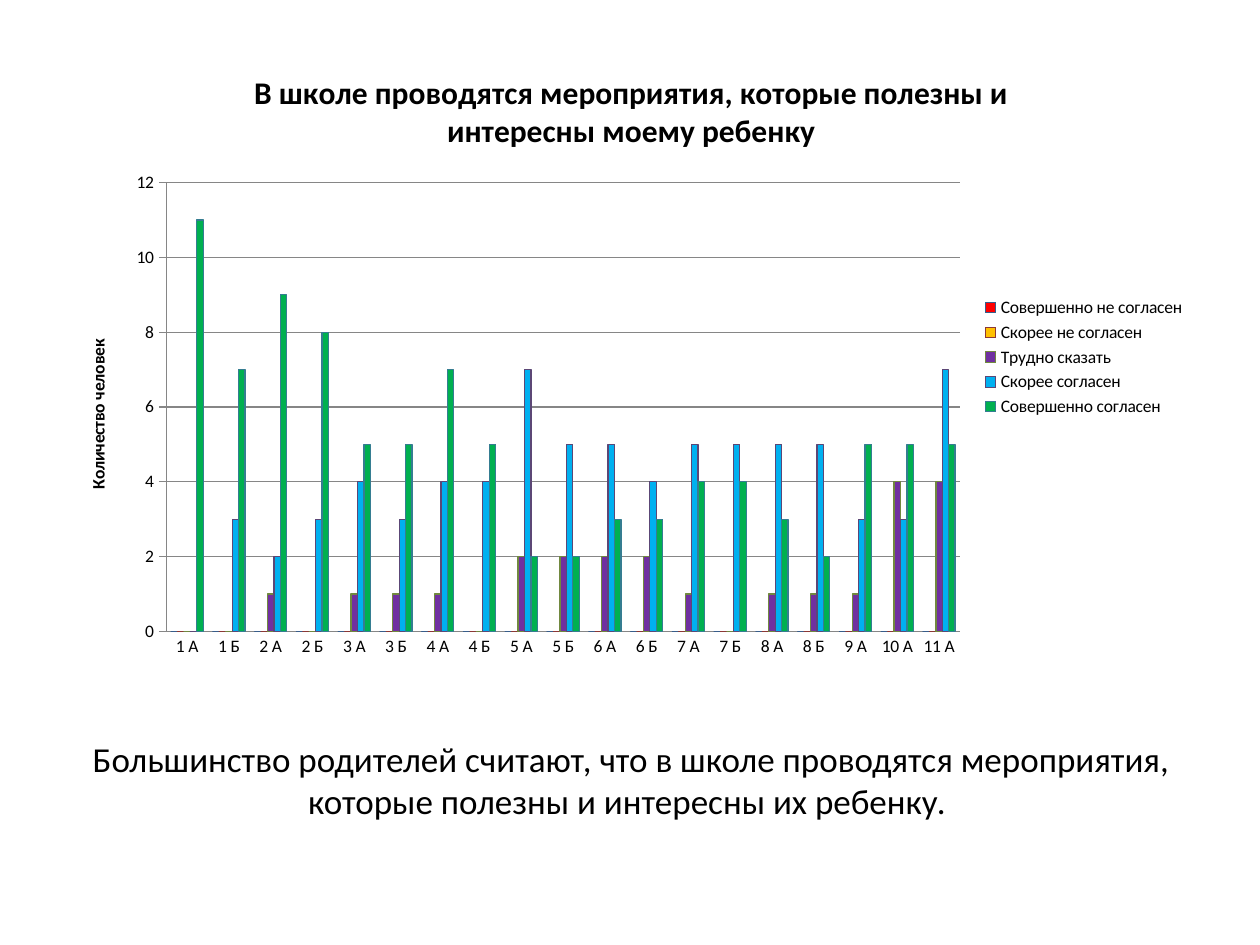
from dataclasses import dataclass

from lxml import etree
from pptx import Presentation
from pptx import util as u
from pptx.chart.data import CategoryChartData
from pptx.dml.color import RGBColor
from pptx.enum import chart as ch, text
from pptx.oxml.ns import qn

FONT = "Calibri"
COLORS = {"text": "000000", "grid": "868686"}


@dataclass
class Answer:
    name: str
    counts: list[int]
    fill: str
    line: str


CLASSES = [f"{n} {c}" for n in range(1, 9) for c in "АБ"] + ["9 А", "10 А", "11 А"]
ANSWERS = [
    Answer("Совершенно не согласен", [0] * len(CLASSES), "FF0000", "385D8A"),
    Answer("Скорее не согласен", [0] * len(CLASSES), "FFC000", "8C3836"),
    Answer("Трудно сказать",
           [0, 0, 1, 0, 1, 1, 1, 0, 2, 2, 2, 2, 1, 0, 1, 1, 1, 4, 4], "7030A0", "71893F"),
    Answer("Скорее согласен",
           [0, 3, 2, 3, 4, 3, 4, 4, 7, 5, 5, 4, 5, 5, 5, 5, 3, 3, 7], "00B0F0", "5C4776"),
    Answer("Совершенно согласен",
           [11, 7, 9, 8, 5, 5, 7, 5, 2, 2, 3, 3, 4, 4, 3, 2, 5, 5, 5], "00B050", "357D91"),
]


def style_font(font, size: float, bold: bool = False) -> None:
    font.name, font.size, font.bold = FONT, u.Pt(size), bold
    font.color.rgb = RGBColor.from_string(COLORS["text"])


def style_line(line, color: str) -> None:
    line.color.rgb = RGBColor.from_string(color)
    line.width = u.Pt(0.75)


def set_title(owner, words: str, size: float) -> None:
    """Title a chart or an axis."""
    tf = owner.text_frame
    tf.text = words
    style_font(tf.paragraphs[0].runs[0].font, size, bold=True)


def place_plot(chart, x: float, y: float, w: float, h: float) -> None:
    """Fix the inner plot area, in fractions of the chart."""
    area = chart._chartSpace.chart.plotArea
    for old in area.findall(qn("c:layout")):
        area.remove(old)
    layout = etree.Element(qn("c:layout"))
    manual = etree.SubElement(layout, qn("c:manualLayout"))
    for tag, val in (("layoutTarget", "inner"), ("xMode", "edge"), ("yMode", "edge"),
                     ("x", x), ("y", y), ("w", w), ("h", h)):
        etree.SubElement(manual, qn(f"c:{tag}")).set("val", str(val))
    area.insert(0, layout)


def add_survey_chart(s) -> None:
    data = CategoryChartData(number_format="General")
    data.categories = CLASSES
    for answer in ANSWERS:
        data.add_series(answer.name, answer.counts)
    chart = s.shapes.add_chart(
        ch.XL_CHART_TYPE.COLUMN_CLUSTERED, u.Inches(0.51), u.Inches(0.36),
        u.Inches(9), u.Inches(4.95), data).chart
    style_font(chart.font, 10)
    chart.has_title = True
    set_title(chart.chart_title,
              "В школе проводятся мероприятия, которые полезны и интересны моему ребенку", 18)
    chart.chart_title.include_in_layout = False
    place_plot(chart, 0.09, 0.22, 0.7, 0.72)

    # Columns
    plot = chart.plots[0]
    plot.gap_width, plot.overlap, plot.vary_by_categories = 150, 0, False
    for series, answer in zip(plot.series, ANSWERS):
        series.format.fill.solid()
        series.format.fill.fore_color.rgb = RGBColor.from_string(answer.fill)
        style_line(series.format.line, answer.line)

    # Axes
    cat, val = chart.category_axis, chart.value_axis
    cat.major_tick_mark = ch.XL_TICK_MARK.NONE
    val.major_tick_mark = ch.XL_TICK_MARK.OUTSIDE
    val.minimum_scale, val.maximum_scale, val.major_unit = 0, 12, 2
    val.has_major_gridlines = True
    set_title(val.axis_title, "Количество человек", 10)
    for part in (cat, val, val.major_gridlines):
        style_line(part.format.line, COLORS["grid"])

    # Legend
    chart.has_legend = True
    chart.legend.position = ch.XL_LEGEND_POSITION.RIGHT
    chart.legend.include_in_layout = False
    style_font(chart.legend.font, 10)


def add_conclusion(s) -> None:
    tf = s.shapes.add_textbox(u.Inches(0.51), u.Inches(5.56),
                              u.Inches(9), u.Inches(1.25)).text_frame
    tf.word_wrap = True
    tf.vertical_anchor = text.MSO_ANCHOR.MIDDLE
    p = tf.paragraphs[0]
    p.text = ("Большинство родителей считают, что в школе проводятся мероприятия, "
              "которые полезны и интересны их ребенку. ")
    p.alignment = text.PP_ALIGN.CENTER
    style_font(p.runs[0].font, 20)


def main() -> None:
    prs = Presentation()
    prs.slide_width, prs.slide_height = u.Inches(10), u.Inches(7.5)
    s = prs.slides.add_slide(prs.slide_layouts[6])
    add_conclusion(s)
    add_survey_chart(s)
    prs.save("out.pptx")


if __name__ == "__main__":
    main()
